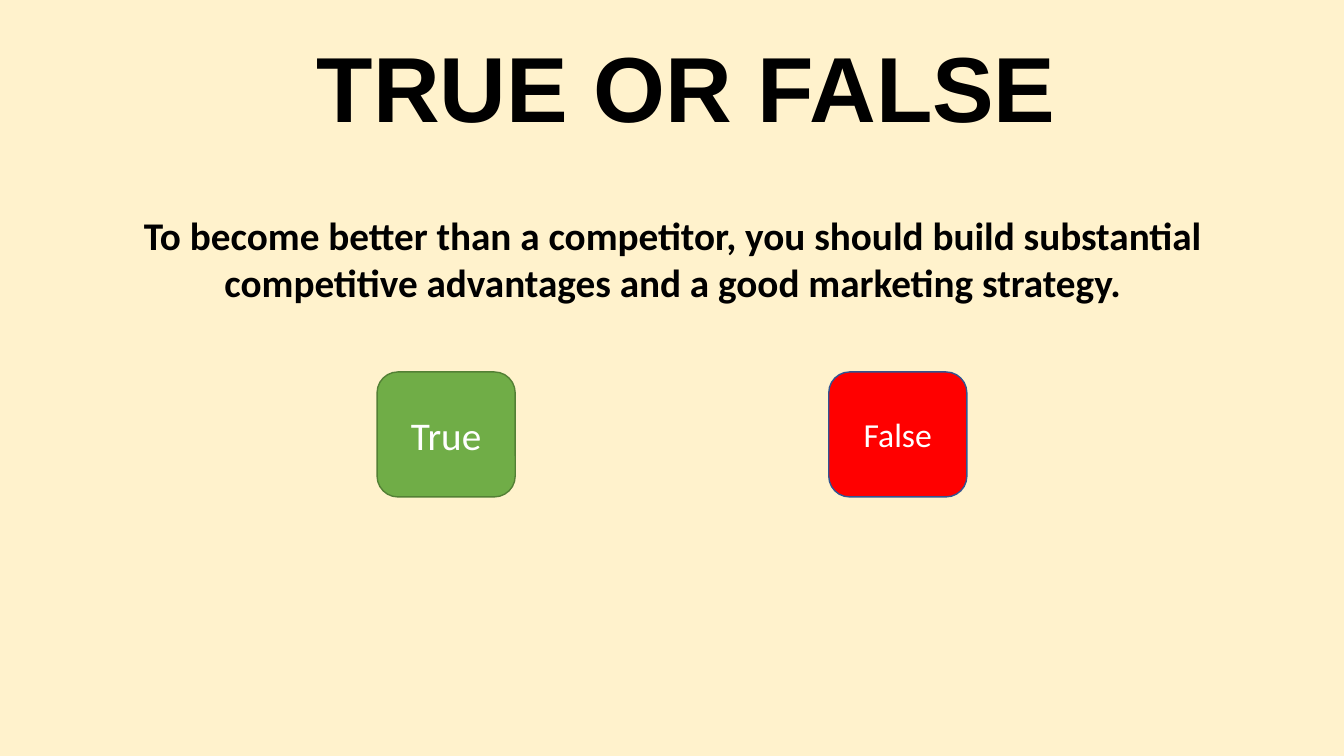
from pptx import Presentation
from pptx import util as u
from pptx.dml.color import RGBColor
from pptx.enum import shapes, text


def colour(code):
    return RGBColor.from_string(code)


class QuizPage:
    """Holds the style and the current slide."""

    body_font = "Calibri"
    title_font = "Arial"
    ink = "000000"
    background = "FFF2CC"

    def __init__(self, deck):
        self.page = deck.slides.add_slide(deck.slide_layouts[5])
        fill = self.page.background.fill
        fill.solid()
        fill.fore_color.rgb = colour(self.background)

    def set_words(self, box, words, ink, anchor, spacing=1.0, **font):
        frame = box.text_frame
        frame_format = {"word_wrap": True, "vertical_anchor": anchor,
                        "auto_size": text.MSO_AUTO_SIZE.NONE}
        for name, value in frame_format.items():
            setattr(frame, name, value)
        para = frame.paragraphs[0]
        para.alignment = text.PP_ALIGN.CENTER
        para.line_spacing = spacing
        span = para.add_run()
        span.text = words
        for name, value in font.items():
            setattr(span.font, name, value)
        span.font.color.rgb = colour(ink)

    def title(self, words, left, top, width, height):
        box = self.page.shapes.title
        place = {"left": left, "top": top, "width": width, "height": height}
        for name, value in place.items():
            setattr(box, name, u.Inches(value))
        self.set_words(box, words, self.ink, text.MSO_ANCHOR.MIDDLE, 0.9,
                       name=self.title_font, size=u.Pt(66), bold=True)

    def statement(self, words, *place):
        box = self.page.shapes.add_textbox(*map(u.Inches, place))
        self.set_words(box, words, self.ink, text.MSO_ANCHOR.TOP,
                       name=self.body_font, size=u.Pt(28), bold=True)

    def answer(self, words, left, size, fill, line):
        box = self.page.shapes.add_shape(
            shapes.MSO_SHAPE.ROUNDED_RECTANGLE,
            *map(u.Inches, (left, 3.69, 1.37, 1.24)))
        box.shadow.inherit = False
        box.fill.solid()
        box.fill.fore_color.rgb = colour(fill)
        box.line.color.rgb = colour(line)
        box.line.width = u.Pt(1)
        self.set_words(box, words, "FFFFFF", text.MSO_ANCHOR.MIDDLE,
                       name=self.body_font, size=u.Pt(size), bold=False)


def main():
    deck = Presentation()
    deck.slide_width, deck.slide_height = u.Inches(13.33), u.Inches(7.5)
    quiz = QuizPage(deck)

    # Question
    quiz.title("TRUE OR FALSE", 1.06, 0.19, 11.5, 1.45)
    quiz.statement("To become better than a competitor, you should build "
                   "substantial competitive advantages and a good marketing "
                   "strategy.", 1.26, 2.05, 10.82, 1.04)

    # Answer buttons
    quiz.answer("False", 8.22, 24, "FF0000", "325491")
    quiz.answer("True", 3.74, 28, "70AD47", "538035")

    deck.save("out.pptx")


if __name__ == "__main__":
    main()
